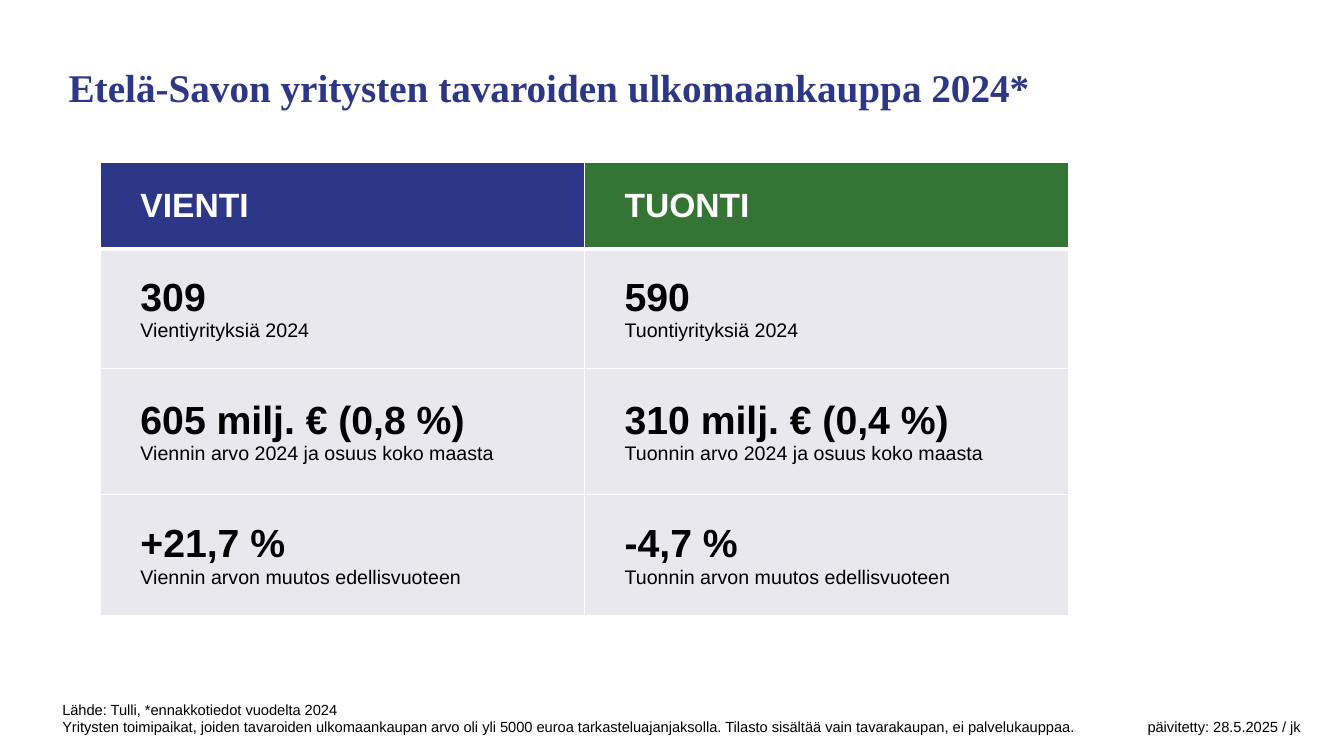
from lxml.etree import SubElement
from pptx import Presentation
from pptx.dml.color import RGBColor
from pptx.enum.text import MSO_ANCHOR, MSO_AUTO_SIZE, PP_ALIGN
from pptx.oxml import parse_xml
from pptx.oxml.ns import nsdecls, qn
from pptx.util import Cm, Pt

COLOURS = {
    "navy": "2D3787",
    "green": "347434",
    "grey": "E8E8ED",
    "black": "000000",
    "white": "FFFFFF",
}
HEADINGS = [("VIENTI", "navy"), ("TUONTI", "green")]
FIGURES = [
    [("309", "Vientiyrityksiä 2024"), ("590", "Tuontiyrityksiä 2024")],
    [
        ("605 milj. € (0,8 %)", "Viennin arvo 2024 ja osuus koko maasta"),
        ("310 milj. € (0,4 %)", "Tuonnin arvo 2024 ja osuus koko maasta"),
    ],
    [
        ("+21,7 %", "Viennin arvon muutos edellisvuoteen"),
        ("-4,7 %", "Tuonnin arvon muutos edellisvuoteen"),
    ],
]
ROW_HEIGHTS = [2.18, 3.02, 3.18, 3.05]
SOURCE = "Lähde: Tulli, *ennakkotiedot vuodelta 2024"
SCOPE = (
    "Yritysten toimipaikat, joiden tavaroiden ulkomaankaupan arvo oli yli 5000 euroa "
    "tarkasteluajanjaksolla. Tilasto sisältää vain tavarakaupan, ei palvelukauppaa."
)
UPDATED = "päivitetty: 28.5.2025 / jk"


def add_run(paragraph, wording, size, colour="black", bold=False, font="Arial"):
    run = paragraph.add_run()
    run.text = wording
    run.font.name = font
    run.font.size = Pt(size)
    run.font.bold = bold
    run.font.color.rgb = RGBColor.from_string(COLOURS[colour])


def place_title(slide, left, top, width, height):
    title = slide.shapes.title
    title.left, title.top = Cm(left), Cm(top)
    title.width, title.height = Cm(width), Cm(height)
    frame = title.text_frame
    frame.auto_size = MSO_AUTO_SIZE.NONE
    frame.word_wrap = True
    frame.vertical_anchor = MSO_ANCHOR.BOTTOM
    frame.margin_left = frame.margin_top = frame.margin_right = 0
    frame.margin_bottom = Cm(0.13)
    heading = frame.paragraphs[0]
    heading.alignment = PP_ALIGN.LEFT
    add_run(heading, "Etelä-Savon yritysten tavaroiden ulkomaankauppa 2024*",
            28, "navy", True, "Times New Roman")


def style_cell(cell, fill, top_line, bottom_line):
    cell.vertical_anchor = MSO_ANCHOR.MIDDLE
    cell.margin_left = Cm(1)
    cell.margin_top = cell.margin_right = cell.margin_bottom = Cm(0.5)
    cell.fill.solid()
    cell.fill.fore_color.rgb = RGBColor.from_string(COLOURS[fill])
    sides = [("L", 1), ("R", 1), ("T", top_line), ("B", bottom_line)]
    for position, (side, points) in enumerate(sides):
        border = parse_xml(
            f'<a:ln{side} {nsdecls("a")} w="{Pt(points)}"><a:solidFill>'
            f'<a:srgbClr val="{COLOURS["white"]}"/></a:solidFill></a:ln{side}>'
        )
        cell._tc.get_or_add_tcPr().insert(position, border)


def place_trade_table(slide, left, top, width):
    trade = slide.shapes.add_table(
        len(ROW_HEIGHTS), len(HEADINGS),
        Cm(left), Cm(top), Cm(width), Cm(sum(ROW_HEIGHTS)),
    ).table
    for column in trade.columns:
        column.width = Cm(width / len(HEADINGS))
    for row, height in zip(trade.rows, ROW_HEIGHTS):
        row.height = Cm(height)
    for column, (heading, fill) in enumerate(HEADINGS):
        cell = trade.cell(0, column)
        style_cell(cell, fill, 1, 3)
        add_run(cell.text_frame.paragraphs[0], heading, 24, "white", True)
    for row, pairs in enumerate(FIGURES, start=1):
        for column, (figure, caption) in enumerate(pairs):
            cell = trade.cell(row, column)
            style_cell(cell, "grey", 3 if row == 1 else 1, 1)
            add_run(cell.text_frame.paragraphs[0], figure, 28, bold=True)
            add_run(cell.text_frame.add_paragraph(), caption, 14)


def place_footnote(slide, left, top, width, height):
    footnote = slide.shapes.add_textbox(Cm(left), Cm(top), Cm(width), Cm(height))
    frame = footnote.text_frame
    frame.word_wrap = True
    add_run(frame.paragraphs[0], SOURCE, 10.5)
    scope = frame.add_paragraph()
    tabs = SubElement(scope._p.get_or_add_pPr(), qn("a:tabLst"))
    SubElement(tabs, qn("a:tab"), pos=str(Cm(width - 5.06)), algn="l")
    add_run(scope, SCOPE, 10.5)
    add_run(scope, "\t" + UPDATED, 10.5)


def main():
    deck = Presentation()
    deck.slide_width, deck.slide_height = Cm(33.87), Cm(19.05)
    slide = deck.slides.add_slide(deck.slide_layouts[5])
    place_title(slide, 1.73, 1.68, 26, 1.24)
    place_trade_table(slide, 2.54, 4.09, 24.4)
    place_footnote(slide, 1.32, 17.53, 32.41, 1.14)
    deck.save("out.pptx")


if __name__ == "__main__":
    main()
